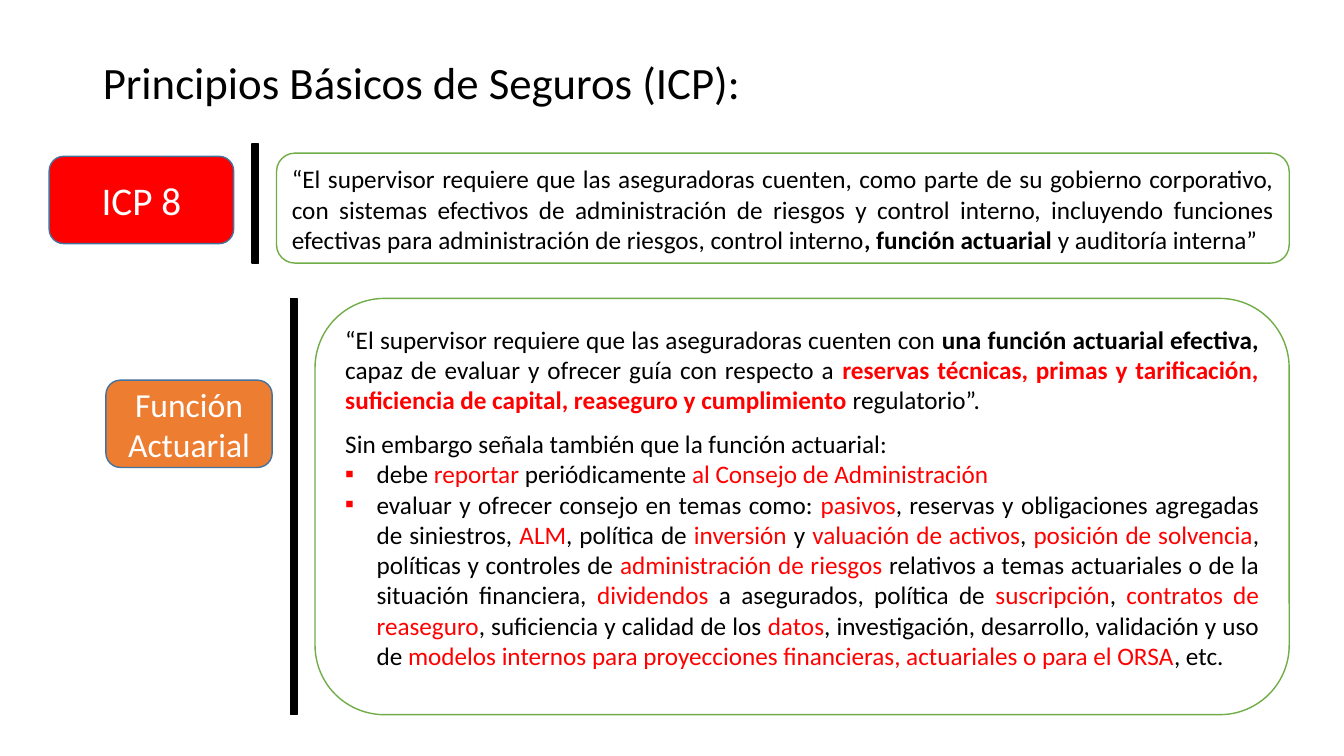
from dataclasses import dataclass
from itertools import cycle

from lxml import etree
from pptx import Presentation
from pptx.dml.color import RGBColor
from pptx.enum import shapes, text
from pptx.oxml import ns
from pptx.util import Cm, Pt


@dataclass(frozen=True)
class Theme:
    font: str = "Calibri"
    black: str = "000000"
    white: str = "FFFFFF"
    red: str = "FF0000"
    orange: str = "ED7D31"
    blue: str = "43739E"
    green: str = "70AD47"
    title: int = 32
    tag: int = 28
    subtag: int = 24
    body: int = 18


T = Theme()
BOLD, RED = {"bold": True}, {"color": T.red}
RECT = shapes.MSO_SHAPE.RECTANGLE
ROUND = shapes.MSO_SHAPE.ROUNDED_RECTANGLE
LEFT, CENTER, JUSTIFY = (text.PP_ALIGN.LEFT, text.PP_ALIGN.CENTER,
                         text.PP_ALIGN.JUSTIFY)
TOP, MIDDLE = text.MSO_ANCHOR.TOP, text.MSO_ANCHOR.MIDDLE

QUOTE = ("“El supervisor requiere que las aseguradoras cuenten, como parte de su "
         "gobierno corporativo, con sistemas efectivos de administración de riesgos "
         "y control interno, incluyendo funciones efectivas para administración de "
         "riesgos, control interno|, función actuarial |y auditoría interna”")
DEFINITION = ("“El supervisor requiere que las aseguradoras cuenten con |una función "
              "actuarial efectiva, |capaz de evaluar y ofrecer guía con respecto a "
              "|reservas técnicas, primas y tarificación, suficiencia de capital, "
              "reaseguro y cumplimiento |regulatorio”.")
LEAD_IN = "Sin embargo señala también que la función actuarial:"
DUTIES = [
    "debe |reportar| periódicamente |al Consejo de Administración",
    "evaluar y ofrecer consejo en temas como: |pasivos|, reservas y obligaciones "
    "agregadas de siniestros, |ALM|, política de| inversión |y |valuación de activos|, "
    "|posición de solvencia|, políticas y controles de |administración de riesgos "
    "|relativos a temas actuariales o de la situación financiera, |dividendos| a "
    "asegurados, política de |suscripción|, |contratos de reaseguro|, suficiencia y "
    "calidad de los |datos|, investigación, desarrollo, validación y uso de |modelos "
    "internos para proyecciones financieras, actuariales o para el ORSA|, etc.",
]


def set_attrs(obj, values):
    for name, value in values.items():
        setattr(obj, name, value)


def setup_frame(tf, anchor):
    set_attrs(tf, {"word_wrap": True, "auto_size": text.MSO_AUTO_SIZE.NONE,
                   "vertical_anchor": anchor,
                   "margin_left": Cm(0.25), "margin_right": Cm(0.25),
                   "margin_top": Cm(0.13), "margin_bottom": Cm(0.13)})


def write(p, copy, size, color=T.black, styles=(RED,), **layout):
    """Fill a paragraph; every second piece between bars is emphasised."""
    set_attrs(p, {"space_before": Pt(0), "line_spacing": 1.0, **layout})
    emphasis = cycle(styles)
    for i, piece in enumerate(copy.split("|")):
        style = {"color": color, "bold": False, **(next(emphasis) if i % 2 else {})}
        r = p.add_run()
        r.text = piece
        set_attrs(r.font, {"name": T.font, "size": Pt(size), "bold": style["bold"]})
        r.font.color.rgb = RGBColor.from_string(style["color"])


def set_bullet(p, char=None):
    hang = Cm(0.79) if char else 0
    pPr = p._p.get_or_add_pPr()
    pPr.set("marL", str(hang))
    pPr.set("indent", str(-hang))
    if not char:
        etree.SubElement(pPr, ns.qn("a:buNone"))
        return
    color = etree.SubElement(pPr, ns.qn("a:buClr"))
    etree.SubElement(color, ns.qn("a:srgbClr"), val=T.red)
    etree.SubElement(pPr, ns.qn("a:buFont"), typeface=T.font)
    etree.SubElement(pPr, ns.qn("a:buChar"), char=char)


def add_panel(s, kind, box, fill, line):
    sp = s.shapes.add_shape(kind, *map(Cm, box))
    sp.shadow.inherit = False
    sp.fill.solid()
    sp.fill.fore_color.rgb = RGBColor.from_string(fill)
    sp.line.color.rgb = RGBColor.from_string(line)
    sp.line.width = Pt(1)
    return sp


def place(sp, box):
    set_attrs(sp, dict(zip(("left", "top", "width", "height"), map(Cm, box))))


def add_title(s, box):
    sp = s.shapes.title
    place(sp, box)
    setup_frame(sp.text_frame, MIDDLE)
    write(sp.text_frame.paragraphs[0], "Principios Básicos de Seguros (ICP):",
          T.title, alignment=LEFT, line_spacing=0.9)


def add_section(s, box, label, size, fill, tag_width, tag_drop, card_drop):
    """Tag, vertical bar and outlined card; returns the card and its box."""
    x, y, w, h = box
    tag = add_panel(s, ROUND, (x, y + tag_drop, tag_width, 2.2), fill, T.blue)
    setup_frame(tag.text_frame, MIDDLE)
    write(tag.text_frame.paragraphs[0], label, size, T.white, alignment=CENTER)
    bar_x = x + tag_width + 0.46
    add_panel(s, RECT, (bar_x, y, 0.17, h), T.black, T.black)
    card_x = bar_x + 0.62
    card_box = (card_x, y + card_drop, x + w - card_x, h - card_drop)
    return add_panel(s, ROUND, card_box, T.white, T.green), card_box


def add_principle(s, box):
    card, _ = add_section(s, box, "ICP 8", T.tag, T.red, 4.65, 0.31, 0.23)
    setup_frame(card.text_frame, TOP)
    write(card.text_frame.paragraphs[0], QUOTE, T.body, styles=(BOLD,),
          alignment=JUSTIFY)


def add_function(s, box):
    _, (x, y, w, h) = add_section(s, box, "Función Actuarial", T.subtag, T.orange,
                                  4.19, 2.06, 0)
    # Body text sits inside the rounded corners, above the card
    body = s.placeholders[1]
    inset = 0.51
    place(body, (x + inset, y + inset, w - 2 * inset, h - 2 * inset))
    s.shapes._spTree.append(body._element)
    tf = body.text_frame
    setup_frame(tf, TOP)
    rows = [(DEFINITION, None, (BOLD, {**BOLD, **RED}), 10), (LEAD_IN, None, (RED,), 0)]
    rows += [(duty, "▪", (RED,), 0) for duty in DUTIES]
    for i, (copy, char, styles, after) in enumerate(rows):
        p = tf.add_paragraph() if i else tf.paragraphs[0]
        set_bullet(p, char)
        write(p, copy, T.body, styles=styles, alignment=JUSTIFY,
              space_after=Pt(after))


def main():
    prs = Presentation()
    prs.slide_width, prs.slide_height = Cm(33.87), Cm(19.05)
    s = prs.slides.add_slide(prs.slide_layouts[1])
    add_title(s, (2.34, 0.76, 29.21, 2.77))
    add_principle(s, (1.24, 3.63, 31.25, 3))
    add_function(s, (2.67, 7.52, 29.82, 10.49))
    prs.save("out.pptx")


if __name__ == "__main__":
    main()
